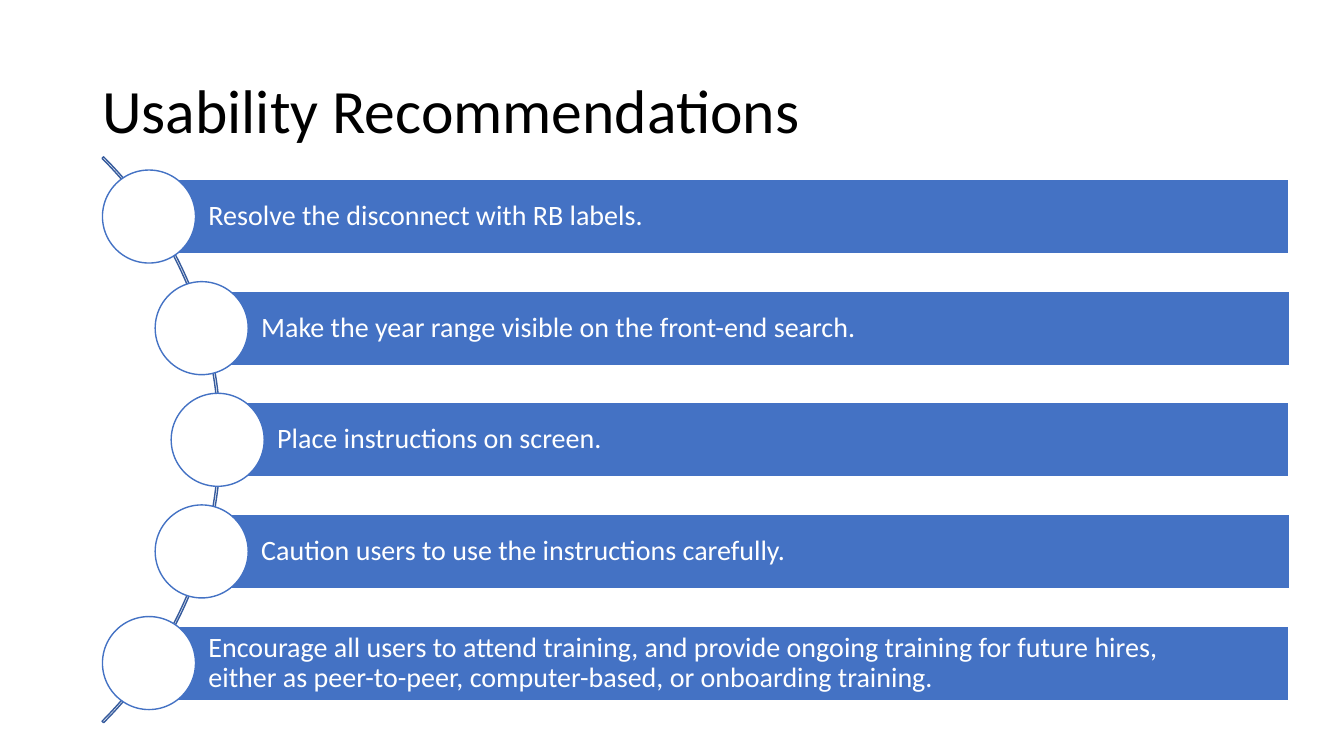
from math import sqrt

from pptx import Presentation
from pptx.dml.color import RGBColor
from pptx.enum.shapes import MSO_SHAPE
from pptx.enum.text import MSO_ANCHOR, PP_ALIGN
from pptx.util import Inches, Pt

ITEMS = [
    ["Resolve the disconnect with RB labels."],
    ["Make the year range visible on the front-end search."],
    ["Place instructions on screen."],
    ["Caution users to use the instructions carefully."],
    ["Encourage all users to attend training, and provide ongoing training for future hires, ",
     "either as peer-to-peer, computer-based, or onboarding training."],
]
COLS, ROWS = 160, 90
BAR = 8.86
STEP = 1.5 * BAR
DOT = 1.25 * BAR
RIGHT = 153.48
HUB_X, HUB_Y = -21.36, 52.36
ARC = 95.28
REACH = 47.28


def color(code):
    return RGBColor.from_string(code)


class Deck:
    """Draw styled elements on one slide laid out in grid columns and rows."""

    font = "Calibri"
    blue, edge, white, black = "4472C4", "365B9D", "FFFFFF", "000000"

    def __init__(self, wide, high):
        self.prs = Presentation()
        self.prs.slide_width, self.prs.slide_height = Inches(wide), Inches(high)
        self.col, self.row = Inches(wide) / COLS, Inches(high) / ROWS
        self.shapes = self.prs.slides.add_slide(self.prs.slide_layouts[6]).shapes

    def place(self, x, y, w, h):
        return [round(v) for v in (x * self.col, y * self.row, w * self.col, h * self.row)]

    def shape(self, kind, box, fill, line):
        item = self.shapes.add_shape(kind, *self.place(*box))
        item.shadow.inherit = False
        if fill:
            item.fill.solid()
            item.fill.fore_color.rgb = color(fill)
        else:
            item.fill.background()
        item.line.color.rgb = color(line)
        item.line.width = Pt(1)
        return item

    def text(self, item, lines, size, tint, pads):
        left, rest = pads
        frame = item.text_frame
        style = {
            "word_wrap": True,
            "vertical_anchor": MSO_ANCHOR.MIDDLE,
            "margin_left": Inches(left),
            "margin_right": Inches(left if left == 0.1 else rest),
            "margin_top": Inches(rest),
            "margin_bottom": Inches(rest),
        }
        for name, value in style.items():
            setattr(frame, name, value)
        para = frame.paragraphs[0]
        para.alignment, para.line_spacing = PP_ALIGN.LEFT, 0.9
        for i, line in enumerate(lines):
            if i:
                para.add_line_break()
            run = para.add_run()
            run.text = line
            for name, value in {"name": self.font, "size": Pt(size)}.items():
                setattr(run.font, name, value)
            run.font.color.rgb = color(tint)

    def title(self, words, box):
        item = self.shapes.add_textbox(*self.place(*box))
        self.text(item, [words], 44, self.black, (0.1, 0.05))

    def arc(self, x, y, size):
        box = (x - size / 2, y - size / 2, size, size)
        item = self.shape(MSO_SHAPE.BLOCK_ARC, box, None, self.edge)
        for i, value in enumerate((189, 27, 0.0027)):
            item.adjustments[i] = value

    def bar(self, x, y, lines):
        box = (x, y - BAR / 2, RIGHT - x, BAR)
        item = self.shape(MSO_SHAPE.RECTANGLE, box, self.blue, self.white)
        self.text(item, lines, 20, self.white, (0.59, 0.06))

    def dot(self, x, y):
        box = (x - DOT / 2, y - DOT / 2, DOT, DOT)
        self.shape(MSO_SHAPE.OVAL, box, self.white, self.blue)


def main():
    deck = Deck(13.33, 7.5)
    deck.title("Usability Recommendations", (11, 4.8, 138, 17.4))
    deck.arc(HUB_X, HUB_Y, ARC)
    for i, lines in enumerate(ITEMS):
        drop = (i - len(ITEMS) // 2) * STEP
        x, y = HUB_X + sqrt(REACH ** 2 - drop ** 2), HUB_Y + drop
        deck.bar(x, y, lines)
        deck.dot(x, y)
    deck.prs.save("out.pptx")


if __name__ == "__main__":
    main()
